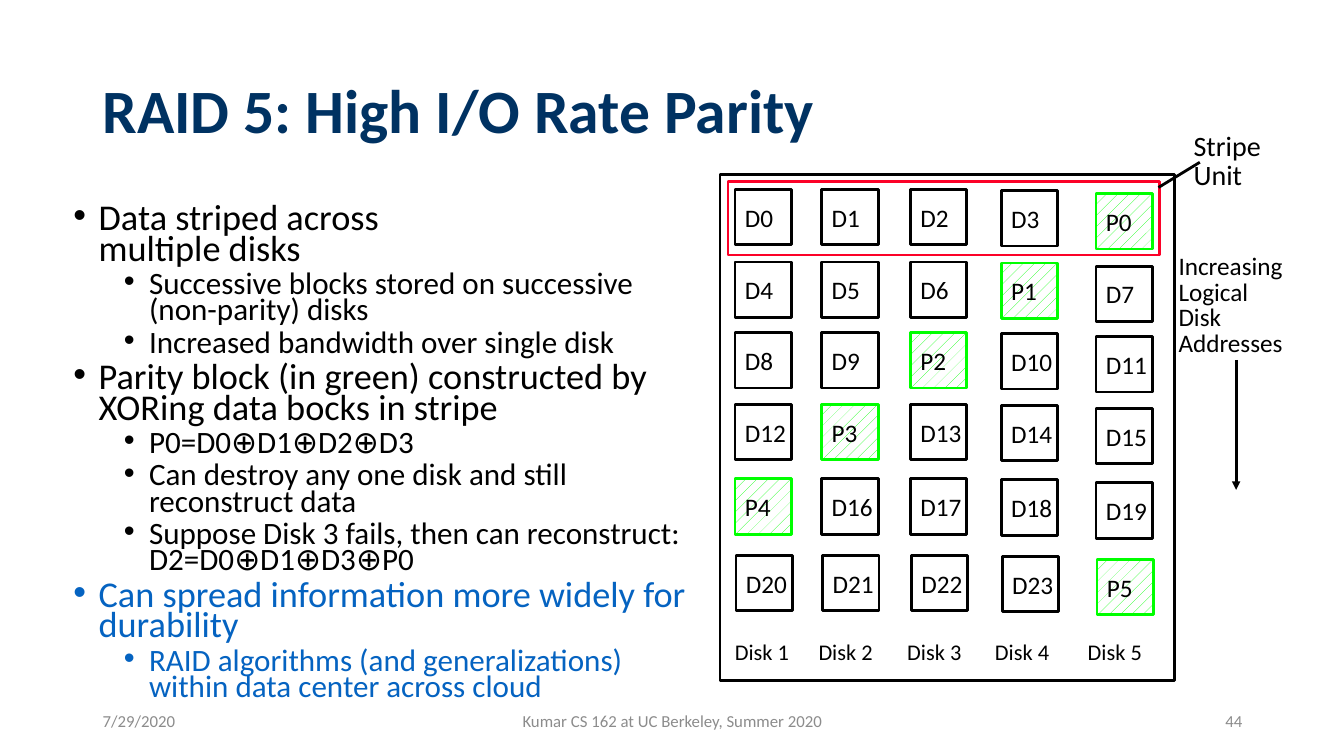
from dataclasses import dataclass

from lxml import etree
from pptx import Presentation
from pptx import util as u
from pptx.dml.color import RGBColor
from pptx.enum import dml, shapes, text
from pptx.oxml import ns

FONT = "Calibri"
COLORS = {
    "title": "003262",
    "ink": "000000",
    "link": "0563C1",
    "footer": "8C8C8C",
    "parity": "00FF00",
    "stripe": "FC0128",
    "paper": "FFFFFF",
}
DISK_LEFTS = [7.29, 8.15, 9.03, 9.93, 10.87]
DISK_DROPS = [0, 0, 0, 0.01, 0.04]
ROW_TOPS = [1.88, 2.6, 3.3, 4.01, 4.75, 5.51]
LABEL_LEFTS = [7.19, 8.02, 8.9, 9.77, 10.69]
BLOCK_SIZE = (0.56, 0.55)


@dataclass
class Label:
    content: str
    at: tuple[float, float, float, float]
    size: float
    color: str = "ink"
    bold: bool = False
    align: text.PP_ALIGN = text.PP_ALIGN.LEFT
    anchor: text.MSO_ANCHOR = text.MSO_ANCHOR.TOP
    spacing: float = 1.0
    wrap: bool = True


@dataclass
class Bullet:
    content: str
    level: int = 0
    color: str = "ink"


@dataclass
class Line:
    start: tuple[float, float]
    end: tuple[float, float]
    arrow: bool = False


MIDDLE = text.MSO_ANCHOR.MIDDLE
LABELS = [
    Label("RAID 5: High I/O Rate Parity", (0.92, 0.4, 11.5, 1.45), 44, "title",
          bold=True, anchor=MIDDLE, spacing=0.9),
    Label("7/29/2020", (0.92, 6.95, 3, 0.4), 12, "footer", anchor=MIDDLE),
    Label("Kumar CS 162 at UC Berkeley, Summer 2020", (4.42, 6.95, 4.5, 0.4), 12,
          "footer", align=text.PP_ALIGN.CENTER, anchor=MIDDLE),
    Label("44", (9.42, 6.95, 3, 0.4), 12, "footer",
          align=text.PP_ALIGN.RIGHT, anchor=MIDDLE),
    Label("Increasing\nLogical\nDisk\nAddresses", (11.59, 2.48, 1.25, 1.13), 18,
          spacing=0.85, wrap=False),
    Label("Stripe\nUnit", (11.74, 1.28, 0.87, 0.67), 20, spacing=0.85, wrap=False),
] + [
    Label(f"Disk {number}", (left, 6.28, 0.74, 0.37), 16, wrap=False)
    for number, left in enumerate(LABEL_LEFTS, 1)
]
BULLETS = [
    Bullet("Data striped across \vmultiple disks"),
    Bullet("Successive blocks stored on successive \v(non-parity) disks", 1),
    Bullet("Increased bandwidth over single disk", 1),
    Bullet("Parity block (in green) constructed by XORing data bocks in stripe"),
    Bullet("P0=D0⊕D1⊕D2⊕D3", 1),
    Bullet("Can destroy any one disk and still \vreconstruct data", 1),
    Bullet("Suppose Disk 3 fails, then can reconstruct:\vD2=D0⊕D1⊕D3⊕P0", 1),
    Bullet("Can spread information more widely for durability", color="link"),
    Bullet("RAID algorithms (and generalizations) within data center across cloud",
           1, "link"),
]
LINES = [
    Line((12.26, 3.57), (12.26, 4.86), arrow=True),
    Line((11.49, 1.86), (11.9, 1.61)),
]


def rgb(name: str) -> RGBColor:
    return RGBColor.from_string(COLORS[name])


def add_child(parent, tag: str, **attributes: str):
    return etree.SubElement(parent, ns.qn(tag), attributes)


def style_spans(para, size: float, color: str, bold: bool = False) -> None:
    for span in para.runs:
        span.font.name = FONT
        span.font.size = u.Pt(size)
        span.font.bold = bold
        span.font.color.rgb = rgb(color)


def draw_label(page, label: Label) -> None:
    box = page.shapes.add_textbox(*map(u.Inches, label.at))
    frame = box.text_frame
    frame.text = label.content
    frame.word_wrap = label.wrap
    frame.vertical_anchor = label.anchor
    if not label.wrap:
        frame.auto_size = text.MSO_AUTO_SIZE.SHAPE_TO_FIT_TEXT
    for para in frame.paragraphs:
        para.alignment = label.align
        para.line_spacing = label.spacing
        style_spans(para, label.size, label.color, label.bold)


def draw_bullets(page, bullets: list[Bullet]) -> None:
    box = page.shapes.add_textbox(*map(u.Inches, (0.63, 2, 6.28, 5.1)))
    frame = box.text_frame
    frame.word_wrap = True
    for index, bullet in enumerate(bullets):
        para = frame.add_paragraph() if index else frame.paragraphs[0]
        para.text = bullet.content
        para.level = bullet.level
        para.line_spacing = 0.7
        properties = para._p.get_or_add_pPr()
        properties.set("marL", str(u.Inches(0.25 + 0.5 * bullet.level)))
        properties.set("indent", str(u.Inches(-0.25)))
        before = add_child(properties, "a:spcBef")
        add_child(before, "a:spcPct", val="20000")
        add_child(properties, "a:buFont", typeface="Arial")
        add_child(properties, "a:buChar", char="•")
        style_spans(para, 22.2 if bullet.level else 25.9, bullet.color)


def draw_rectangle(page, at: tuple[float, float, float, float], color: str):
    box = page.shapes.add_shape(shapes.MSO_SHAPE.RECTANGLE, *map(u.Inches, at))
    box.shadow.inherit = False
    box.fill.background()
    box.line.color.rgb = rgb(color)
    box.line.width = u.Pt(2)
    return box


def draw_block(page, name: str, left: float, top: float, parity: bool) -> None:
    box = draw_rectangle(page, (left, top, *BLOCK_SIZE), "parity" if parity else "ink")
    if parity:
        box.fill.patterned()
        box.fill.pattern = dml.MSO_PATTERN.PERCENT_10
        box.fill.fore_color.rgb = rgb("parity")
        box.fill.back_color.rgb = rgb("paper")
    frame = box.text_frame
    frame.text = name
    frame.word_wrap = False
    frame.vertical_anchor = MIDDLE
    para = frame.paragraphs[0]
    para.alignment = text.PP_ALIGN.LEFT
    style_spans(para, 18, "ink")


def draw_line(page, line: Line) -> None:
    connector = page.shapes.add_connector(
        shapes.MSO_CONNECTOR.STRAIGHT, *map(u.Inches, line.start + line.end))
    connector.line.color.rgb = rgb("ink")
    connector.line.width = u.Pt(2)
    if line.arrow:
        add_child(connector.line._get_or_add_ln(), "a:tailEnd", type="triangle")
    add_child(connector._element.spPr, "a:effectLst")


def draw_disks(page) -> None:
    draw_rectangle(page, (7.22, 1.8, 4.28, 0.73), "stripe")
    draw_rectangle(page, (7.14, 1.73, 4.51, 5.02), "ink")
    disk_count = len(DISK_LEFTS)
    data_number = 0
    for row, top in enumerate(ROW_TOPS):
        parity_disk = (disk_count - 1 - row) % disk_count
        shift = 0.01 if row == len(ROW_TOPS) - 1 else 0
        for disk, (left, drop) in enumerate(zip(DISK_LEFTS, DISK_DROPS)):
            parity = disk == parity_disk
            name = f"P{row}" if parity else f"D{data_number}"
            draw_block(page, name, left + shift, top + drop, parity)
            data_number += not parity


def main() -> None:
    deck = Presentation()
    deck.slide_width, deck.slide_height = u.Inches(13.33), u.Inches(7.5)
    page = deck.slides.add_slide(deck.slide_layouts[6])

    # Explanation on the left
    draw_bullets(page, BULLETS)

    # Disk array with its stripe
    draw_disks(page)
    for line in LINES:
        draw_line(page, line)

    # Title, footer and captions
    for label in LABELS:
        draw_label(page, label)

    deck.save("out.pptx")


if __name__ == "__main__":
    main()
